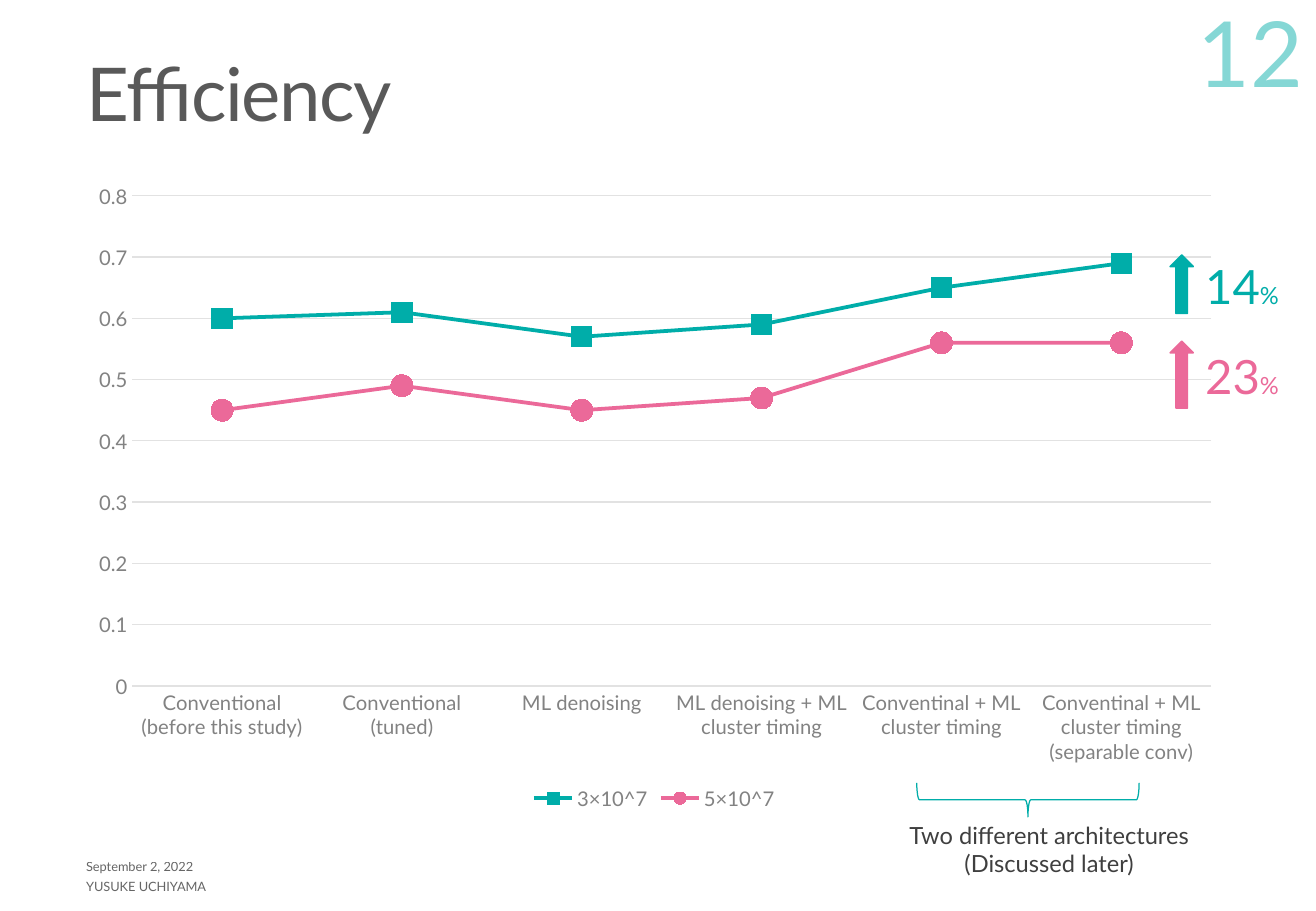
"""Build the efficiency slide: a two-series line chart with gains and a braced note."""
from dataclasses import dataclass
from typing import NamedTuple

import pptx
import pptx.chart.data
import pptx.dml.color
import pptx.enum.chart
import pptx.enum.shapes
import pptx.enum.text
import pptx.oxml
import pptx.oxml.ns
import pptx.util

RGB = pptx.dml.color.RGBColor
TEAL = RGB(0x00, 0xAD, 0xA9)
PINK = RGB(0xEB, 0x69, 0x99)
TITLE_GREY = RGB(0x59, 0x59, 0x59)
DARK = RGB(0x3F, 0x3F, 0x3F)
AXIS_GREY = RGB(0x82, 0x82, 0x82)
GRID_GREY = RGB(0xE2, 0xE2, 0xE2)
FONT = "Lato"
Pt = pptx.util.Pt
Shape = pptx.enum.shapes.MSO_SHAPE
Align = pptx.enum.text.PP_ALIGN
Anchor = pptx.enum.text.MSO_ANCHOR
Marker = pptx.enum.chart.XL_MARKER_STYLE
WIDTH, HEIGHT = pptx.util.Inches(10.83), pptx.util.Inches(7.5)
MARGIN = 5.63
ARROW_LEFT, GAIN_LEFT = 88.92, 90.67


class Box(NamedTuple):
    """A place on the slide in percent of its width and height."""

    x: float
    y: float
    w: float
    h: float

    def emu(self) -> list[int]:
        """Return left, top, width and height in EMU."""
        sides = (WIDTH, HEIGHT, WIDTH, HEIGHT)
        return [round(share * side / 100) for share, side in zip(self, sides)]


@dataclass(frozen=True)
class Series:
    """One line of the chart with its gain arrow and label."""

    name: str
    values: tuple[float, ...]
    color: RGB
    marker: Marker
    marker_size: int
    gain: str
    arrow_top: float
    arrow_height: float
    gain_top: float


CATEGORIES = (
    "Conventional (before this study)",
    "Conventional (tuned)",
    "ML denoising",
    "ML denoising + ML cluster timing",
    "Conventinal + ML cluster timing",
    "Conventinal + ML cluster timing (separable conv)",
)
SERIES = (
    Series("3×10^7", (0.6, 0.61, 0.57, 0.59, 0.65, 0.69), TEAL, Marker.SQUARE, 12,
           "14", 28, 6.4, 27.6),
    Series("5×10^7", (0.45, 0.49, 0.45, 0.47, 0.56, 0.56), PINK, Marker.CIRCLE, 13,
           "23", 37.47, 7.33, 37.47),
)


def style_font(font, size: float, color: RGB) -> None:
    """Set typeface, size and colour of a font."""
    font.name, font.size = FONT, Pt(size)
    font.color.rgb = color


def write(p, text: str, *, size: float, color: RGB, alpha: int = 100,
          spacing: float = 0, align: Align = Align.LEFT) -> None:
    """Append formatted text to a paragraph, breaking lines at newlines."""
    p.alignment = align
    for i, line in enumerate(text.split("\n")):
        if i:
            p.add_line_break()
        r = p.add_run()
        r.text = line
        style_font(r.font, size, color)
        rPr = r._r.get_or_add_rPr()
        if spacing:
            rPr.set("spc", str(round(spacing * 100)))
        if alpha < 100:
            clr = rPr.find(".//" + pptx.oxml.ns.qn("a:srgbClr"))
            a = clr.makeelement(pptx.oxml.ns.qn("a:alpha"), {"val": str(alpha * 1000)})
            clr.append(a)


def add_text(s, box: Box, *, anchor: Anchor = Anchor.TOP, wrap: bool = True):
    """Add an empty text box and return its first paragraph."""
    tf = s.shapes.add_textbox(*box.emu()).text_frame
    tf.word_wrap, tf.vertical_anchor = wrap, anchor
    return tf.paragraphs[0]


def add_outline(s, kind: Shape, box: Box, color: RGB, width: float):
    """Add an unfilled, unshadowed preset shape with a coloured line."""
    sp = s.shapes.add_shape(kind, *box.emu())
    sp.shadow.inherit = False
    sp.fill.background()
    sp.line.color.rgb, sp.line.width = color, Pt(width)
    return sp


def add_title(s, text: str) -> None:
    """Place and format the title placeholder."""
    sp = s.shapes.title
    sp.left, sp.top, sp.width, sp.height = Box(MARGIN, 4.8, 88.37, 12).emu()
    tf = sp.text_frame
    tf.vertical_anchor = Anchor.MIDDLE
    tf.auto_size = pptx.enum.text.MSO_AUTO_SIZE.NONE
    p = tf.paragraphs[0]
    p.line_spacing = 0.85
    write(p, text, size=44, color=TITLE_GREY, spacing=-0.9)


def format_axis(axis) -> None:
    """Remove tick marks and set the label font."""
    axis.major_tick_mark = axis.minor_tick_mark = pptx.enum.chart.XL_TICK_MARK.NONE
    style_font(axis.tick_labels.font, 12, AXIS_GREY)


def set_plot_layout(chart, x: float, y: float, w: float, h: float) -> None:
    """Fix the inner plot area as shares of the chart."""
    area = chart._chartSpace.chart.plotArea
    for old in area.findall(pptx.oxml.ns.qn("c:layout")):
        area.remove(old)
    area.insert(0, pptx.oxml.parse_xml(
        f'<c:layout {pptx.oxml.ns.nsdecls("c")}><c:manualLayout>'
        '<c:layoutTarget val="inner"/><c:xMode val="edge"/><c:yMode val="edge"/>'
        f'<c:x val="{x}"/><c:y val="{y}"/><c:w val="{w}"/><c:h val="{h}"/>'
        '</c:manualLayout></c:layout>'))


def add_efficiency_chart(s) -> None:
    """Add the line chart of both series."""
    data = pptx.chart.data.CategoryChartData()
    data.categories = CATEGORIES
    for item in SERIES:
        data.add_series(item.name, item.values)
    kind = pptx.enum.chart.XL_CHART_TYPE.LINE_MARKERS
    chart = s.shapes.add_chart(kind, *Box(MARGIN, 18.67, 88.18, 70.8).emu(), data).chart
    style_font(chart.font, 10, DARK)
    chart.has_title = False
    chart.has_legend = True
    chart.legend.position = pptx.enum.chart.XL_LEGEND_POSITION.BOTTOM
    chart.legend.include_in_layout = False
    style_font(chart.legend.font, 12, AXIS_GREY)
    cats, vals = chart.category_axis, chart.value_axis
    format_axis(cats)
    format_axis(vals)
    vals.minimum_scale, vals.maximum_scale, vals.major_unit = 0, 0.8, 0.1
    vals.format.line.fill.background()
    for line in (cats.format.line, vals.major_gridlines.format.line):
        line.color.rgb, line.width = GRID_GREY, Pt(0.75)
    chart.plots[0].vary_by_categories = False
    for item, ser in zip(SERIES, chart.plots[0].series):
        ser.smooth = False
        ser.format.line.color.rgb, ser.format.line.width = item.color, Pt(2.25)
        ser.marker.style, ser.marker.size = item.marker, item.marker_size
        ser.marker.format.fill.solid()
        ser.marker.format.fill.fore_color.rgb = item.color
        ser.marker.format.line.color.rgb = item.color
    set_plot_layout(chart, 0.05, 0.04, 0.93, 0.76)


def add_gain(s, item: Series) -> None:
    """Add the arrow and percentage of one series."""
    box = Box(ARROW_LEFT, item.arrow_top, 1.75, item.arrow_height)
    sp = add_outline(s, Shape.UP_ARROW, box, item.color, 1)
    sp.fill.solid()
    sp.fill.fore_color.rgb = item.color
    p = add_text(s, Box(GAIN_LEFT, item.gain_top, 7.48, 7.6), wrap=False)
    write(p, item.gain, size=28, color=item.color)
    write(p, "%", size=14, color=item.color)


def main() -> None:
    """Build and save the slide."""
    prs = pptx.Presentation()
    prs.slide_width, prs.slide_height = WIDTH, HEIGHT
    s = prs.slides.add_slide(prs.slide_layouts[5])
    add_title(s, "Efficiency")
    for text, top in (("September 2, 2022", 93.47), ("YUSUKE UCHIYAMA", 95.6)):
        p = add_text(s, Box(MARGIN, top, 41.27, 3.33), anchor=Anchor.MIDDLE)
        write(p, text, size=7.6, color=DARK, alpha=80)
    p = add_text(s, Box(88.92, 0.27, 10.99, 12), anchor=Anchor.BOTTOM)
    write(p, "12", size=54, color=TEAL, alpha=47, align=Align.RIGHT)
    add_efficiency_chart(s)
    for item in SERIES:
        add_gain(s, item)
    add_outline(s, Shape.LEFT_BRACE, Box(76.82, 75.6, 2.59, 24.4), TEAL, 0.75).rotation = 270
    p = add_text(s, Box(67.22, 89.47, 25.02, 7.6), wrap=False)
    write(p, "Two different architectures\n(Discussed later)", size=14, color=DARK,
          align=Align.CENTER)
    prs.save("out.pptx")


if __name__ == "__main__":
    main()
